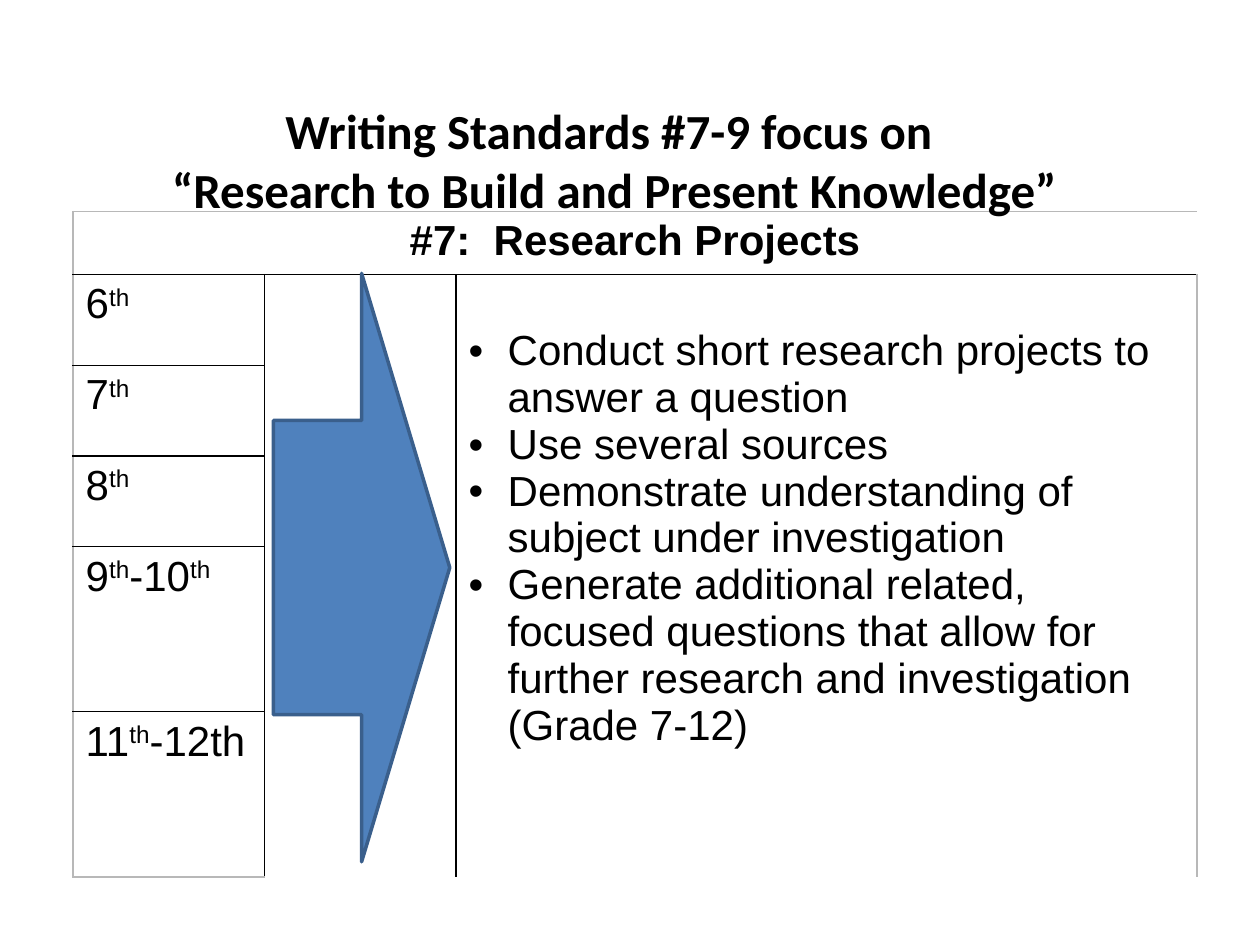
import pptx
import pptx.util
import pptx.dml.color
import pptx.enum.shapes
import pptx.enum.text
import pptx.oxml.ns
from lxml import etree

Inches, Pt = pptx.util.Inches, pptx.util.Pt
qn = pptx.oxml.ns.qn
CENTER = pptx.enum.text.PP_ALIGN.CENTER
COLORS = {"text": "000000", "grid": "000000", "frame": "B8B8B8",
          "arrow": "4F81BD", "arrow_edge": "3A5F8C"}

TITLE = ["Writing Standards #7-9 focus on ",
         "“Research to Build and Present Knowledge”"]
HEADING = "#7:  Research Projects"
# Each grade alternates normal and superscript text
GRADES = [["6", "th"], ["7", "th"], ["8", "th"],
          ["9", "th", "-10", "th"], ["11", "th", "-12th"]]
SKILLS = ["Conduct short research projects to answer a question",
          "Use several sources",
          "Demonstrate understanding of subject under investigation",
          "Generate additional related, focused questions that allow for "
          "further research and investigation (Grade 7-12)"]
COLUMNS = [1.52, 1.52, 5.88]
ROWS = [0.5, 0.72, 0.72, 0.72, 1.31, 1.31]


def rgb(name):
    return pptx.dml.color.RGBColor.from_string(COLORS[name])


def set_font(paragraph, name, size, bold=False):
    font = paragraph.font
    font.name, font.size, font.bold = name, Pt(size), bold
    font.color.rgb = rgb("text")


def add_title(slide, left, top, width, height):
    box = slide.shapes.add_textbox(Inches(left), Inches(top), Inches(width), Inches(height))
    frame = box.text_frame
    frame.word_wrap = True
    frame.vertical_anchor = pptx.enum.text.MSO_ANCHOR.BOTTOM
    frame.text = "\n".join(TITLE)
    for line in frame.paragraphs:
        line.alignment = CENTER
        set_font(line, "Calibri", 28, True)


def border_colors(row, column):
    """Colour of each side; None inside a merged area."""
    last_row, last_column = len(ROWS) - 1, len(COLUMNS) - 1
    across = "grid" if row > 0 else None
    below = "grid" if row == 0 or column == 0 else None
    above = "grid" if row == 1 or column == 0 else None
    return {"a:lnL": "frame" if column == 0 else across,
            "a:lnR": "frame" if column == last_column else across,
            "a:lnT": "frame" if row == 0 else above,
            "a:lnB": "frame" if row == last_row else below}


def style_cell(cell, row, column):
    properties = cell._tc.get_or_add_tcPr()
    for side, color in border_colors(row, column).items():
        line = etree.SubElement(properties, qn(side), w=str(Pt(1)))
        if color:
            fill = etree.SubElement(line, qn("a:solidFill"))
            etree.SubElement(fill, qn("a:srgbClr"), val=COLORS[color])
        else:
            etree.SubElement(line, qn("a:noFill"))
    cell.fill.background()


def fill_grade(cell, parts):
    paragraph = cell.text_frame.paragraphs[0]
    for index, part in enumerate(parts):
        run = paragraph.add_run()
        run.text = part
        if index % 2:
            run._r.get_or_add_rPr().set("baseline", "30000")
    set_font(paragraph, "Arial", 24)


def fill_skills(cell):
    cell.margin_top = Inches(0.42)
    cell.text = "\n".join(SKILLS)
    for skill in cell.text_frame.paragraphs:
        properties = skill._p.get_or_add_pPr()
        properties.set("marL", str(Inches(0.31)))
        properties.set("indent", str(-Inches(0.31)))
        etree.SubElement(properties, qn("a:buFont"), typeface="Arial")
        etree.SubElement(properties, qn("a:buChar"), char="•")
        set_font(skill, "Arial", 24)


def add_standards(slide, left, top):
    table = slide.shapes.add_table(
        len(ROWS), len(COLUMNS), Inches(left), Inches(top),
        Inches(sum(COLUMNS)), Inches(sum(ROWS))).table
    table.first_row = table.horz_banding = False
    for column, width in zip(table.columns, COLUMNS):
        column.width = Inches(width)
    for row, height in zip(table.rows, ROWS):
        row.height = Inches(height)
    for row in range(len(ROWS)):
        for column in range(len(COLUMNS)):
            style_cell(table.cell(row, column), row, column)

    # Heading across the top, arrow and skills columns down the side
    table.cell(0, 0).merge(table.cell(0, 2))
    for column in (1, 2):
        table.cell(1, column).merge(table.cell(len(ROWS) - 1, column))

    table.cell(0, 0).text = HEADING
    heading = table.cell(0, 0).text_frame.paragraphs[0]
    heading.alignment = CENTER
    set_font(heading, "Arial", 24, True)
    for row, grade in enumerate(GRADES, start=1):
        fill_grade(table.cell(row, 0), grade)
    fill_skills(table.cell(1, 2))


def add_arrow(slide, left, top, width, height):
    arrow = slide.shapes.add_shape(
        pptx.enum.shapes.MSO_SHAPE.RIGHT_ARROW,
        Inches(left), Inches(top), Inches(width), Inches(height))
    arrow.shadow.inherit = False
    arrow.fill.solid()
    arrow.fill.fore_color.rgb = rgb("arrow")
    arrow.line.color.rgb = rgb("arrow_edge")
    arrow.line.width = Pt(2)


def main():
    deck = pptx.Presentation()
    deck.slide_width, deck.slide_height = Inches(10), Inches(7.5)
    slide = deck.slides.add_slide(deck.slide_layouts[6])
    add_standards(slide, 0.58, 1.68)
    add_title(slide, 1.25, 0.27, 7.25, 1.51)
    add_arrow(slide, 2.17, 2.17, 1.4, 4.67)
    deck.save("out.pptx")


if __name__ == "__main__":
    main()
